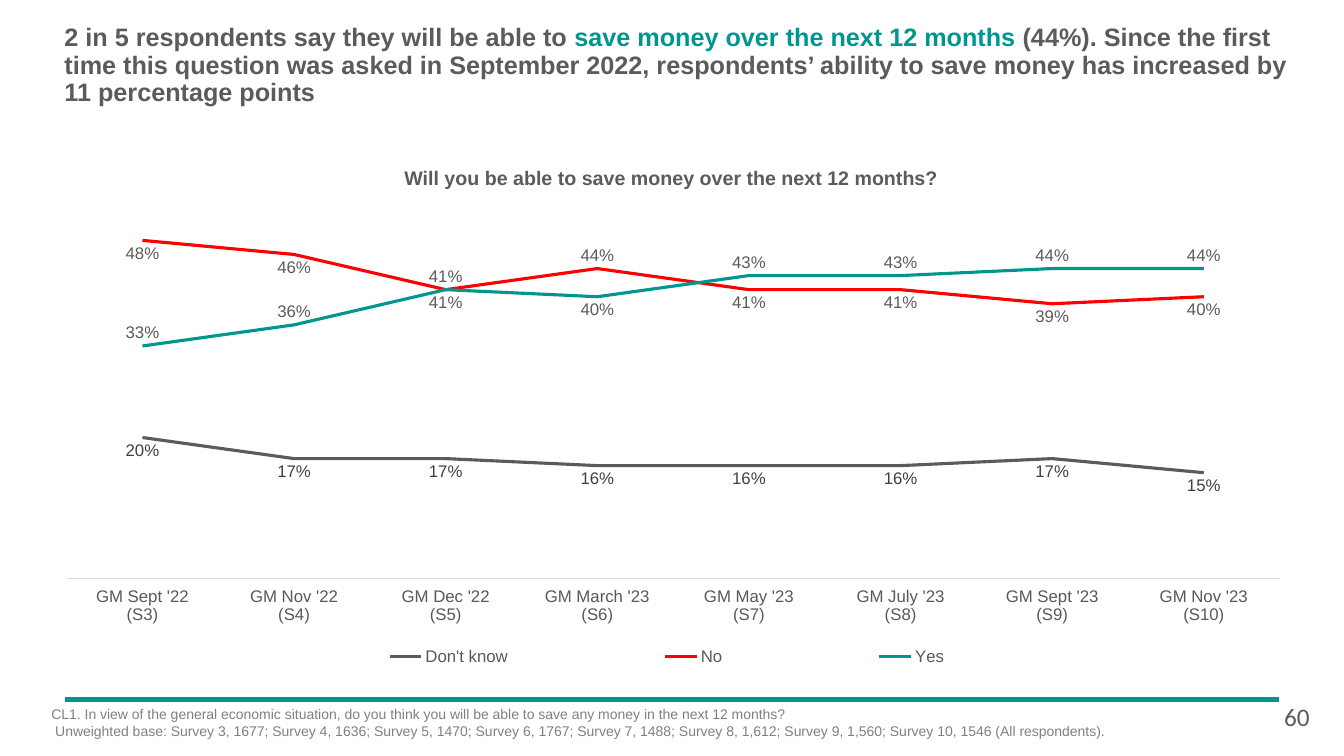
from lxml.etree import SubElement
from pptx import Presentation
from pptx.chart.data import CategoryChartData
from pptx.dml.color import RGBColor
from pptx.enum.chart import (XL_CHART_TYPE, XL_LABEL_POSITION,
                             XL_LEGEND_POSITION, XL_TICK_LABEL_POSITION,
                             XL_TICK_MARK)
from pptx.enum.shapes import MSO_CONNECTOR
from pptx.enum.text import PP_ALIGN
from pptx.oxml.ns import qn
from pptx.util import Inches, Pt

# Slide grid: 100 columns by 100 rows
WIDTH, HEIGHT = Inches(13.33), Inches(7.5)
COLUMN, ROW = WIDTH / 100, HEIGHT / 100
LEFT_MARGIN, RIGHT_MARGIN = 4.8, 95.2

TEAL = RGBColor(0x00, 0x96, 0x90)
RED = RGBColor(0xFF, 0x00, 0x00)
SLATE = RGBColor(0x5C, 0x5B, 0x5A)
LABEL_GRAY = RGBColor(0x40, 0x40, 0x40)
AXIS_GRAY = RGBColor(0x59, 0x59, 0x59)
AXIS_LINE = RGBColor(0xD9, 0xD9, 0xD9)
FOOTNOTE_GRAY = RGBColor(0x80, 0x80, 0x80)

ABOVE, BELOW = XL_LABEL_POSITION.ABOVE, XL_LABEL_POSITION.BELOW
MARCH = 3

SURVEYS = ["GM Sept '22\n(S3)", "GM Nov '22\n(S4)", "GM Dec '22\n(S5)",
           "GM March '23\n(S6)", "GM May '23\n(S7)", "GM July '23\n(S8)",
           "GM Sept '23\n(S9)", "GM Nov '23\n(S10)"]

# Answer, percentages, line colour, label colour, label side, March label side
ANSWERS = [
    ("Don't know", (20, 17, 17, 16, 16, 16, 17, 15), SLATE, LABEL_GRAY, BELOW, BELOW),
    ("No", (48, 46, 41, 44, 41, 41, 39, 40), RED, SLATE, BELOW, ABOVE),
    ("Yes", (33, 36, 41, 40, 43, 43, 44, 44), TEAL, SLATE, ABOVE, BELOW),
]

HEADLINE = [
    ("2 in 5 respondents say they will be able to ", SLATE),
    ("save money over the next 12 months ", TEAL),
    ("(44%). Since the first time this question was asked in September 2022, "
     "respondents’ ability to save money has increased by 11 percentage points", SLATE),
]
QUESTION = "Will you be able to save money over the next 12 months?"
FOOTNOTE = [
    "CL1. In view of the general economic situation, do you think you will be "
    "able to save any money in the next 12 months?",
    " Unweighted base: Survey 3, 1677; Survey 4, 1636; Survey 5, 1470; "
    "Survey 6, 1767; Survey 7, 1488; Survey 8, 1,612; Survey 9, 1,560; "
    "Survey 10, 1546 (All respondents).",
]


def on_grid(left, top, width, height):
    return (int(left * COLUMN), int(top * ROW),
            int(width * COLUMN), int(height * ROW))


def apply(target, **values):
    for attribute, value in values.items():
        setattr(target, attribute, value)


def style_font(font, size, color, bold=False, face="Arial"):
    apply(font, size=Pt(size), bold=bold, name=face)
    font.color.rgb = color


def add_text(slide, area, paragraphs, size, bold=False, face="Arial",
             inset=True, **paragraph_format):
    """Each paragraph is a list of (text, colour) runs."""
    frame = slide.shapes.add_textbox(*on_grid(*area)).text_frame
    frame.word_wrap = True
    if not inset:
        apply(frame, margin_left=0, margin_top=0, margin_right=0, margin_bottom=0)
    for index, runs in enumerate(paragraphs):
        paragraph = frame.add_paragraph() if index else frame.paragraphs[0]
        apply(paragraph, **paragraph_format)
        for text, color in runs:
            run = paragraph.add_run()
            run.text = text
            style_font(run.font, size, color, bold, face)


def add_rule(slide, row):
    y = int(row * ROW)
    rule = slide.shapes.add_connector(MSO_CONNECTOR.STRAIGHT, int(LEFT_MARGIN * COLUMN), y,
                                      int(RIGHT_MARGIN * COLUMN), y)
    rule.line.color.rgb = TEAL
    rule.line.width = Pt(3)
    SubElement(rule._element.spPr, qn("a:effectLst"))


def set_layout(element, before, x, y, w, h, inner=False):
    """Fix the place of a chart part, as shares of the chart's size."""
    for old in element.findall(qn("c:layout")):
        element.remove(old)
    layout = SubElement(element, qn("c:layout"))
    manual = SubElement(layout, qn("c:manualLayout"))
    settings = {"layoutTarget": "inner"} if inner else {}
    settings.update(xMode="edge", yMode="edge", x=x, y=y, w=w, h=h)
    for tag, value in settings.items():
        SubElement(manual, qn(f"c:{tag}")).set("val", str(value))
    element.find(qn(before)).addprevious(layout)


def style_answer(series, color, label_color, side, march_side):
    apply(series, smooth=False)
    series.format.line.color.rgb = color
    series.format.line.width = Pt(2.25)
    labels = series.data_labels
    apply(labels, show_value=True, position=side,
          number_format="0%", number_format_is_linked=False)
    style_font(labels.font, 12, label_color)
    if march_side != side:
        march_label = series.points[MARCH].data_label
        style_font(march_label.font, 12, label_color)
        march_label.position = march_side


def add_answers_chart(slide, area):
    data = CategoryChartData(number_format="0%")
    data.categories = SURVEYS
    for name, percentages, *_ in ANSWERS:
        data.add_series(name, [value / 100 for value in percentages])
    chart = slide.shapes.add_chart(XL_CHART_TYPE.LINE, *on_grid(*area), data).chart
    apply(chart, has_title=False, has_legend=True)
    style_font(chart.font, 10, RGBColor(0, 0, 0))

    # Lines and labels
    plot = chart.plots[0]
    plot.vary_by_categories = False
    for series, (_, _, *style) in zip(plot.series, ANSWERS):
        style_answer(series, *style)

    # Axes
    surveys = chart.category_axis
    apply(surveys, major_tick_mark=XL_TICK_MARK.NONE, minor_tick_mark=XL_TICK_MARK.NONE,
          tick_label_position=XL_TICK_LABEL_POSITION.LOW)
    style_font(surveys.tick_labels.font, 12, AXIS_GRAY)
    surveys.format.line.color.rgb = AXIS_LINE
    surveys.format.line.width = Pt(0.75)
    apply(chart.value_axis, visible=False, has_major_gridlines=False,
          minimum_scale=0, maximum_scale=0.5)

    # Legend and plot places
    legend = chart.legend
    apply(legend, position=XL_LEGEND_POSITION.BOTTOM, include_in_layout=False)
    style_font(legend.font, 12, AXIS_GRAY)
    set_layout(legend._element, "c:overlay", 0.15, 0.87, 0.7, 0.08)
    set_layout(chart._chartSpace.chart.plotArea, "c:lineChart",
               0.01, 0.03, 0.99, 0.72, inner=True)


def main():
    deck = Presentation()
    apply(deck, slide_width=WIDTH, slide_height=HEIGHT)
    slide = deck.slides.add_slide(deck.slide_layouts[6])

    add_rule(slide, 92.53)
    # Headline and chart question
    add_text(slide, (LEFT_MARGIN, 3.33, 91.8, 11.6), [HEADLINE], 18, bold=True,
             inset=False, line_spacing=0.9)
    add_text(slide, (13.65, 22, 72.6, 3.2), [[(QUESTION, SLATE)]], 14, bold=True,
             inset=False, alignment=PP_ALIGN.CENTER)
    add_answers_chart(slide, (4.05, 28, 91.2, 64.67))
    # Footnote and page number
    add_text(slide, (3.08, 92.67, 89.9, 7.33),
             [[(line, FOOTNOTE_GRAY)] for line in FOOTNOTE], 10)
    add_text(slide, (94.8, 92.13, 4, 5.33), [[("60", SLATE)]], 18, face="Calibri")

    deck.save("out.pptx")


if __name__ == "__main__":
    main()
